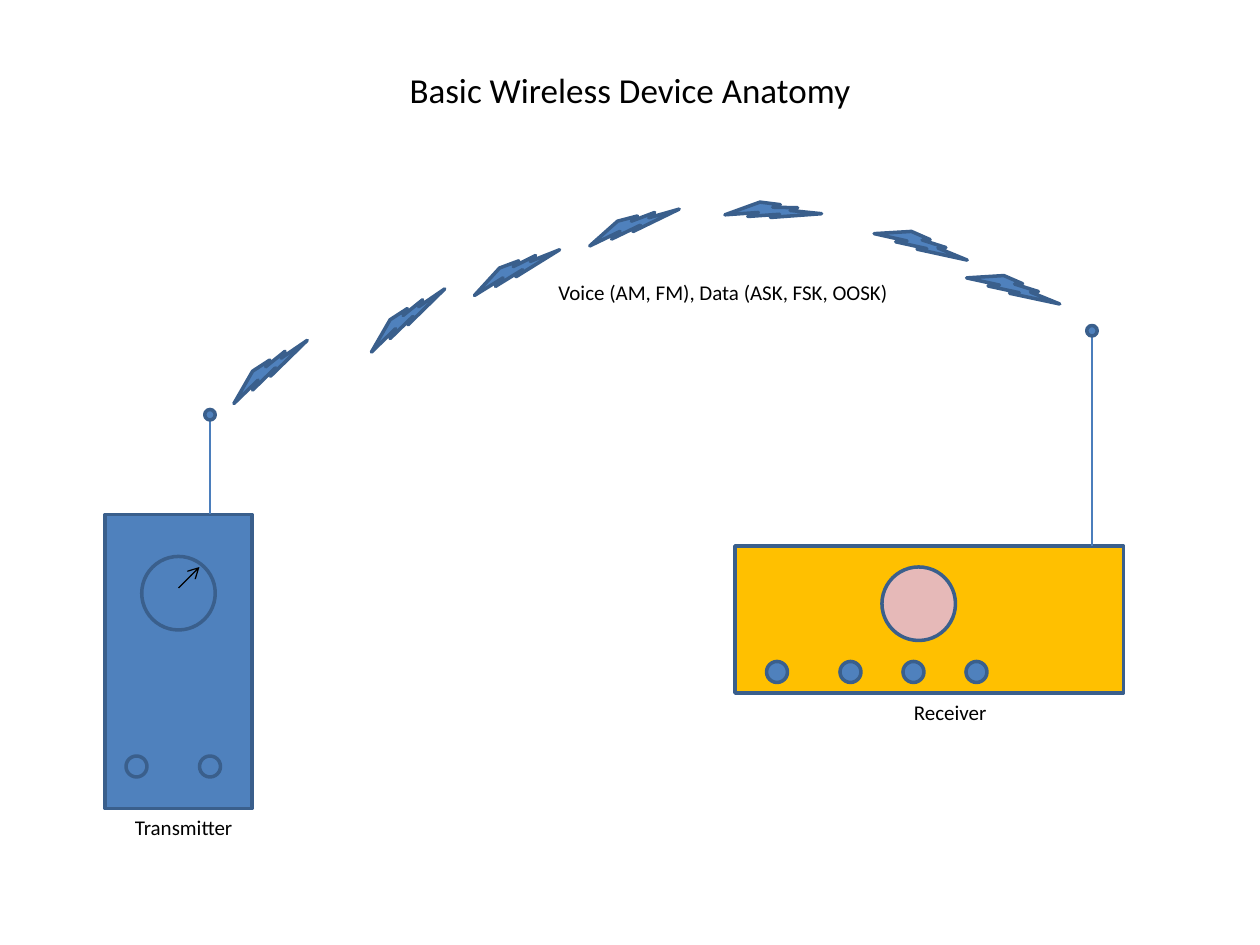
from typing import NamedTuple

from lxml import etree
from pptx import Presentation
from pptx import util as u
from pptx.dml.color import RGBColor
from pptx.enum import shapes, text
from pptx.oxml.ns import qn

COLUMNS, ROWS = 120, 90
BLUE, OUTLINE, WIRE = "4F81BD", "3A5F8C", "4B7EBC"
AMBER, PINK, BLACK = "FFC000", "E6B9B8", "000000"
BOLT_WIDTH, BOLT_HEIGHT = 9, 2.4
KNOB, DIAL, TIP = 2, 7, 1
RECTANGLE = shapes.MSO_SHAPE.RECTANGLE
OVAL = shapes.MSO_SHAPE.OVAL
BOLT = shapes.MSO_SHAPE.LIGHTNING_BOLT
CENTER = text.PP_ALIGN.CENTER

presentation = Presentation()
presentation.slide_width, presentation.slide_height = u.Inches(10), u.Inches(7.5)
slide = presentation.slides.add_slide(presentation.slide_layouts[5])


class Box(NamedTuple):
    column: float
    row: float
    width: float
    height: float


class Device(NamedTuple):
    name: str
    body: Box
    fill: str
    dial: tuple[float, float]
    dial_fill: str
    knob_columns: list[float]
    knob_row: float
    antenna_column: float
    antenna_top: float
    label: Box


class Signal(NamedTuple):
    column: float
    row: float
    rotation: float


DEVICES = [
    Device("Transmitter", Box(10, 49, 14, 28), BLUE, (13.5, 53), BLUE,
           [12, 19], 72, 20, 40, Box(5, 77, 25, 3.6)),
    Device("Receiver", Box(70, 52, 37, 14), AMBER, (84, 54), PINK,
           [73, 80, 86, 92], 63, 104, 32, Box(78, 66, 25, 3.6)),
]

SIGNALS = [
    Signal(25.6, 35.3, 306.9),
    Signal(38.7, 30.4, 306.9),
    Signal(49.1, 25.8, 319.4),
    Signal(60.3, 21.5, 325.3),
    Signal(73.6, 20.2, 347),
    Signal(87.7, 23.3, 3.5),
    Signal(96.5, 27.5, 3.3),
]


def x(columns: float) -> int:
    return round(presentation.slide_width * columns / COLUMNS)


def y(rows: float) -> int:
    return round(presentation.slide_height * rows / ROWS)


def place(box: Box) -> tuple[int, int, int, int]:
    return x(box.column), y(box.row), x(box.width), y(box.height)


def color(value: str) -> RGBColor:
    return RGBColor.from_string(value)


def write(shape, words: str, size: float, alignment=None) -> None:
    shape.text_frame.word_wrap = True
    shape.text_frame.text = words
    paragraph = shape.text_frame.paragraphs[0]
    paragraph.alignment = alignment
    paragraph.font.name = "Calibri"
    paragraph.font.size = u.Pt(size)
    paragraph.font.color.rgb = color(BLACK)


def add_label(box: Box, words: str, alignment=None) -> None:
    label = slide.shapes.add_textbox(*place(box))
    label.text_frame.auto_size = text.MSO_AUTO_SIZE.SHAPE_TO_FIT_TEXT
    write(label, words, 12, alignment)


def add_part(kind, box: Box, fill: str = BLUE, rotation: float = 0) -> None:
    shape = slide.shapes.add_shape(kind, *place(box))
    shape.shadow.inherit = False
    shape.fill.solid()
    shape.fill.fore_color.rgb = color(fill)
    shape.line.color.rgb = color(OUTLINE)
    shape.line.width = u.Pt(2)
    shape.rotation = rotation


def add_line(start: tuple[float, float], end: tuple[float, float],
             stroke: str, arrow: bool = False) -> None:
    connector = slide.shapes.add_connector(
        shapes.MSO_CONNECTOR.STRAIGHT,
        x(start[0]), y(start[1]), x(end[0]), y(end[1]))
    connector.line.color.rgb = color(stroke)
    connector.line.width = u.Pt(0.75)
    if arrow:
        etree.SubElement(connector.line._get_or_add_ln(), qn("a:tailEnd"), type="arrow")
    etree.SubElement(connector._element.spPr, qn("a:effectLst"))


def add_device(device: Device) -> None:
    add_part(RECTANGLE, device.body, device.fill)
    add_part(OVAL, Box(*device.dial, DIAL, DIAL), device.dial_fill)
    for column in device.knob_columns:
        add_part(OVAL, Box(column, device.knob_row, KNOB, KNOB))
    add_line((device.antenna_column, device.antenna_top),
             (device.antenna_column, device.body.row), WIRE)
    add_part(OVAL, Box(device.antenna_column - TIP / 2,
                       device.antenna_top - TIP, TIP, TIP))
    add_label(device.label, device.name, CENTER)


def add_signal(signal: Signal) -> None:
    box = Box(signal.column - BOLT_WIDTH / 2, signal.row - BOLT_HEIGHT / 2,
              BOLT_WIDTH, BOLT_HEIGHT)
    add_part(BOLT, box, rotation=signal.rotation)


def main() -> None:
    title = slide.shapes.title
    title.left, title.top, title.width, title.height = place(Box(6, 5, 108, 7))
    title.text_frame.vertical_anchor = text.MSO_ANCHOR.MIDDLE
    write(title, "Basic Wireless Device Anatomy", 20, CENTER)
    for device in DEVICES:
        add_device(device)
    add_line((17, 56), (19, 54), BLACK, arrow=True)
    for signal in SIGNALS:
        add_signal(signal)
    add_label(Box(52, 26, 56, 3.6), "Voice (AM, FM), Data (ASK, FSK, OOSK)")
    presentation.save("out.pptx")


if __name__ == "__main__":
    main()
